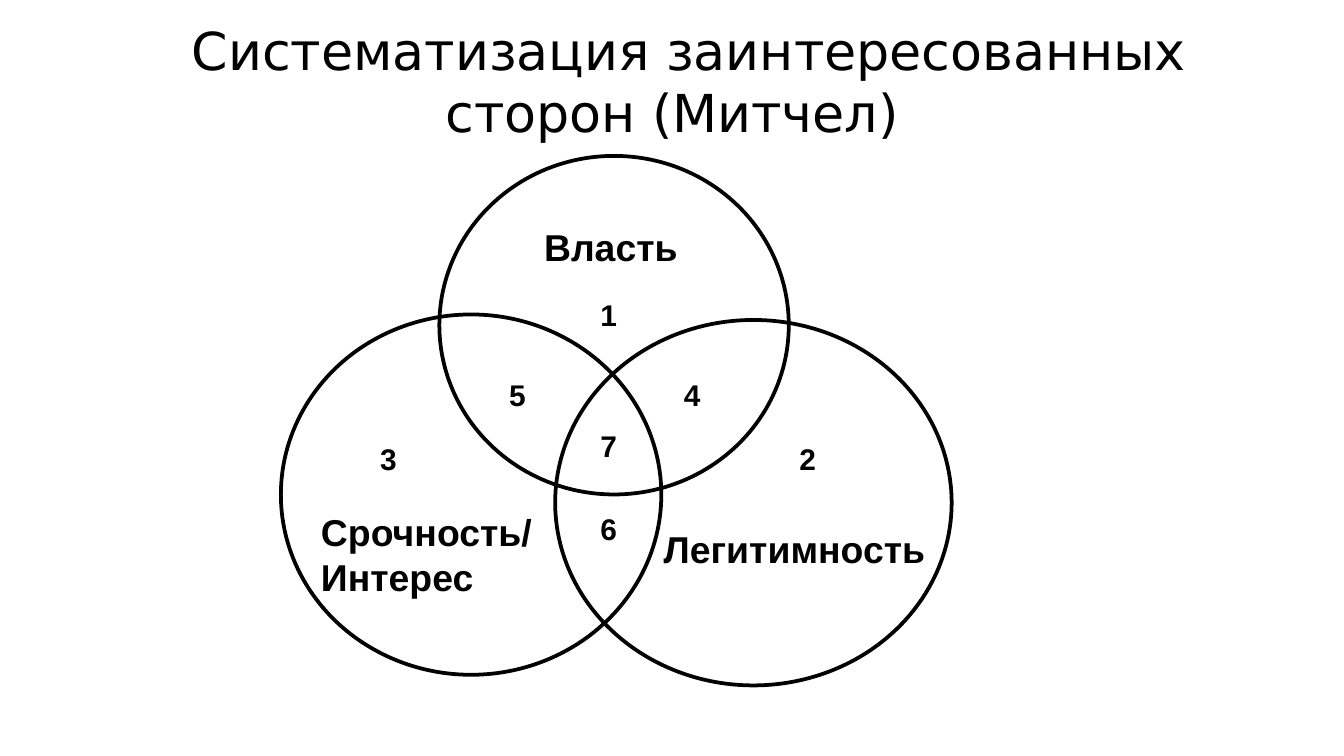
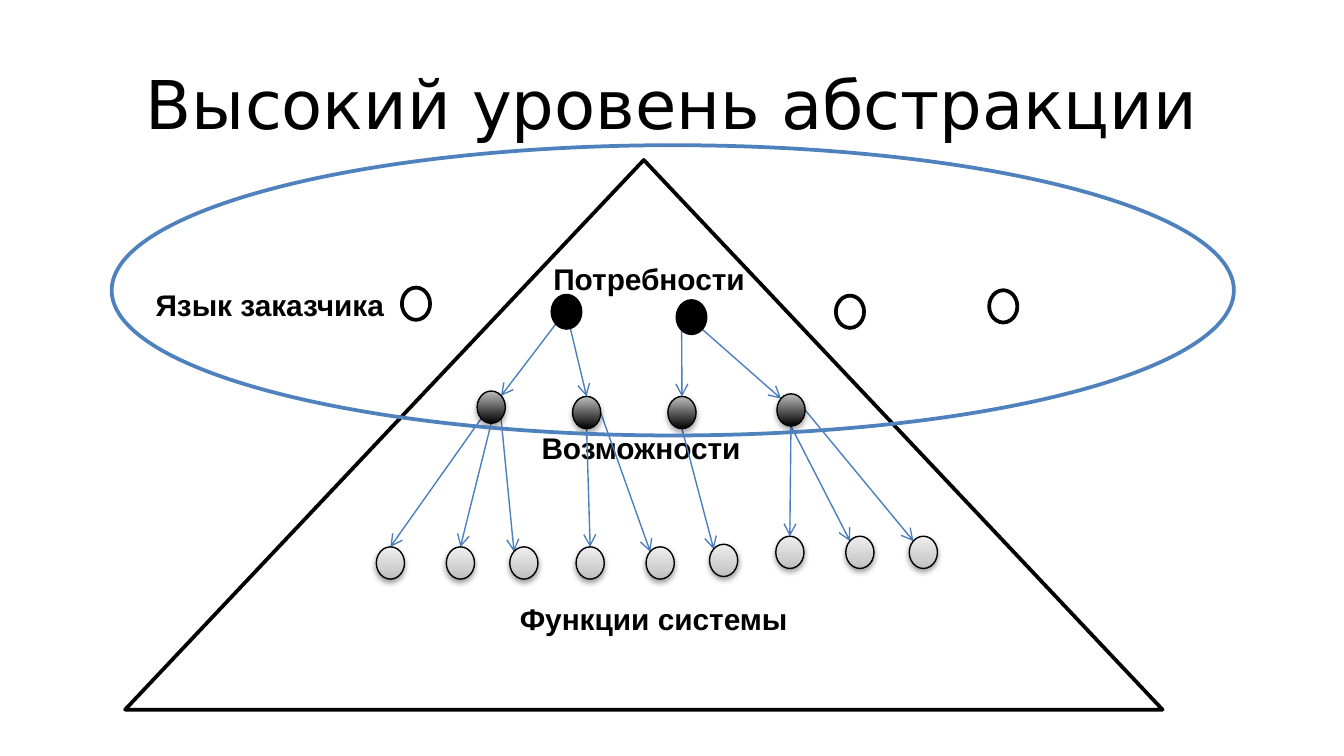
from lxml import etree
from pptx import Presentation
from pptx import util as u
from pptx.dml.color import RGBColor
from pptx.enum import shapes, text
from pptx.oxml.ns import qn

COLORS = {"black": "000000", "white": "FFFFFF", "blue": "4F81BD", "arrow": "4B7EBC"}
RGB = {name: RGBColor.from_string(value) for name, value in COLORS.items()}
TITLE_FONT, LABEL_FONT = "DejaVu Sans", "Arial"
THICK, THIN = 2, 0.75
OVAL, TRIANGLE = shapes.MSO_SHAPE.OVAL, shapes.MSO_SHAPE.ISOSCELES_TRIANGLE
GRADIENTS = {
    "dark": {"stops": {0: "000000", 100: "BDBDBD"}, "alpha": 35, "distance": 1.8},
    "light": {"stops": {0: "BDBDBD", 35: "D1D1D1", 100: "EEEEEE"}, "alpha": 38, "distance": 1.6},
}


def add_label(s, lines, x, y, w, size, title_height=None):
    h = title_height or 7.2 + 1.2 * size * len(lines)
    tf = s.shapes.add_textbox(u.Pt(x), u.Pt(y), u.Pt(w), u.Pt(h)).text_frame
    tf.word_wrap = bool(title_height)
    if title_height:
        tf.vertical_anchor = text.MSO_ANCHOR.BOTTOM
        tf.margin_top = tf.margin_bottom = u.Pt(7.2)
    else:
        tf.auto_size = text.MSO_AUTO_SIZE.SHAPE_TO_FIT_TEXT
    for i, line in enumerate(lines):
        p = tf.add_paragraph() if i else tf.paragraphs[0]
        p.text = line
        p.alignment = text.PP_ALIGN.CENTER if title_height else text.PP_ALIGN.LEFT
        p.font.name = TITLE_FONT if title_height else LABEL_FONT
        p.font.size = u.Pt(size)
        p.font.bold = not title_height
        p.font.color.rgb = RGB["black"]
    return tf


def add_figure(s, kind, x, y, w, h, fill=None, line="black", width=THICK):
    sp = s.shapes.add_shape(kind, u.Pt(x), u.Pt(y), u.Pt(w), u.Pt(h))
    sp.shadow.inherit = False
    sp.line.color.rgb = RGB[line]
    sp.line.width = u.Pt(width)
    if fill in GRADIENTS:
        look = GRADIENTS[fill]
        sp.fill.gradient()
        sp.fill.gradient_angle = 90
        spPr = sp._element.spPr
        gsLst = spPr.find(".//" + qn("a:gsLst"))
        for gs in list(gsLst):
            gsLst.remove(gs)
        for percent, color in look["stops"].items():
            gs = etree.SubElement(gsLst, qn("a:gs"), pos=str(percent * 1000))
            etree.SubElement(gs, qn("a:srgbClr"), val=color)
        shadow = etree.SubElement(
            spPr.find(qn("a:effectLst")), qn("a:outerShdw"), blurRad=str(u.Pt(3.1)),
            dist=str(u.Pt(look["distance"])), dir="5400000", rotWithShape="0")
        clr = etree.SubElement(shadow, qn("a:srgbClr"), val=COLORS["black"])
        etree.SubElement(clr, qn("a:alpha"), val=str(look["alpha"] * 1000))
    elif fill:
        sp.fill.solid()
        sp.fill.fore_color.rgb = RGB[fill]
    else:
        sp.fill.background()


prs = Presentation()
prs.slide_width, prs.slide_height = u.Pt(720), u.Pt(405)
slides, titles = [], []
for title, size in [("Систематизация заинтересованных сторон (Митчел)", 28),
                    ("Высокий уровень абстракции", 36)]:
    s = prs.slides.add_slide(prs.slide_layouts[6])
    s.background.fill.solid()
    s.background.fill.fore_color.rgb = RGB["white"]
    titles.append(add_label(s, [title], 36, 16.5, 648, size, title_height=67.5))
    slides.append(s)
venn, pyramid = slides
titles[0].paragraphs[0]._p.get_or_add_pPr().set("indent", str(u.Pt(18)))

power = {"box": (235.4, 83.5, 187.2, 181.4), "fill": "white",
         "name": ["Власть"], "name_at": (284.4, 116.6, 86.4)}
legitimacy = {"box": (297.4, 171.4, 212.4, 195.8), "fill": None,
              "name": ["Легитимность"], "name_at": (348.5, 278.6, 156.2)}
urgency = {"box": (150.5, 168.5, 203.8, 193), "fill": None,
           "name": ["Срочность/", "Интерес"], "name_at": (164.9, 269.3, 129.6)}
circles = [power, legitimacy, urgency]
for circle in circles:
    add_figure(venn, OVAL, *circle["box"], circle["fill"])
for circle in circles:
    add_label(venn, circle["name"], *circle["name_at"], 20)

AXIS = 314.6
ONE_CIRCLE_Y, TWO_CIRCLES_Y = 232.6, 198.4
zones = {1: (0, 155.5), 2: (106.6, ONE_CIRCLE_Y), 3: (-118, ONE_CIRCLE_Y),
         4: (44.7, TWO_CIRCLES_Y), 5: (-48.9, TWO_CIRCLES_Y),
         6: (0, 270), 7: (0, 225.4)}
for number, (from_axis, y) in zones.items():
    add_label(venn, [str(number)], AXIS + from_axis, y, 23.8, 16)

add_figure(pyramid, TRIANGLE, 67, 85.7, 555.8, 294.5, "white")
for name, x, y, w in [("Потребности", 289.4, 136.1, 119.5),
                      ("Возможности", 283, 226.8, 123.8),
                      ("Функции системы", 271.4, 318.2, 159.8)]:
    add_label(pyramid, [name], x, y, w, 16)

DOT_W, DOT_H = 15.1, 17.3
RIM = {"top": (0.5, 0), "bottom": (0.5, 1), "right": (1, 0.5), "center": (0.5, 0.5),
       "top left": (0.15, 0.15), "top right": (0.85, 0.15),
       "bottom left": (0.15, 0.85), "bottom right": (0.85, 0.85)}

needs = [(295.9, 158.4), (362.9, 161.3)]
features = list(zip([255.6, 306.7, 357.8, 416.2], [209.5, 212.4, 212.4, 211]))
function_xs = [201.6 + 107 * group + step for group in range(3) for step in (0, 37.5, 71.5)]
function_ys = [293] * 5 + [291.6] + [287.3] * 3
functions = list(zip(function_xs, function_ys))
outsiders = [(447.8, 158.4), (529.9, 155.5), (215.3, 154.1)]

need_links = [(0, "bottom left", 0, "top right"), (0, "center", 1, "top"),
              (1, "bottom left", 2, "top"), (1, "bottom right", 3, "top left")]
feature_links = [(0, "bottom left", 0, "top"), (0, "bottom", 1, "top"),
                 (0, "bottom right", 2, "top left"),
                 (1, "bottom", 3, "top"), (1, "right", 4, "top left"),
                 (2, "bottom", 5, "top left"),
                 (3, "bottom", 6, "top"), (3, "bottom", 7, "top left"),
                 (3, "right", 8, "top left")]

for parents, children, links in [(needs, features, need_links),
                                 (features, functions, feature_links)]:
    for parent, leaves, child, enters in links:
        ends = []
        for (x, y), side in [(parents[parent], leaves), (children[child], enters)]:
            across, down = RIM[side]
            ends += [u.Pt(x + across * DOT_W), u.Pt(y + down * DOT_H)]
        c = pyramid.shapes.add_connector(shapes.MSO_CONNECTOR.STRAIGHT, *ends)
        c.line.color.rgb = RGB["arrow"]
        c.line.width = u.Pt(THIN)
        etree.SubElement(c.line._get_or_add_ln(), qn("a:tailEnd"), type="arrow")
        etree.SubElement(c._element.spPr, qn("a:effectLst"))

for dots, fill, width in [(features, "dark", THIN), (needs, "black", THICK),
                          (functions, "light", THIN)]:
    for x, y in dots:
        add_figure(pyramid, OVAL, x, y, DOT_W, DOT_H, fill, width=width)

add_figure(pyramid, OVAL, 59.8, 77.8, 601.2, 155.5, line="blue")
add_label(pyramid, ["Язык заказчика"], 76.3, 149.8, 139, 16)
for x, y in outsiders:
    add_figure(pyramid, OVAL, x, y, DOT_W, DOT_H, "white")

prs.save("out.pptx")
